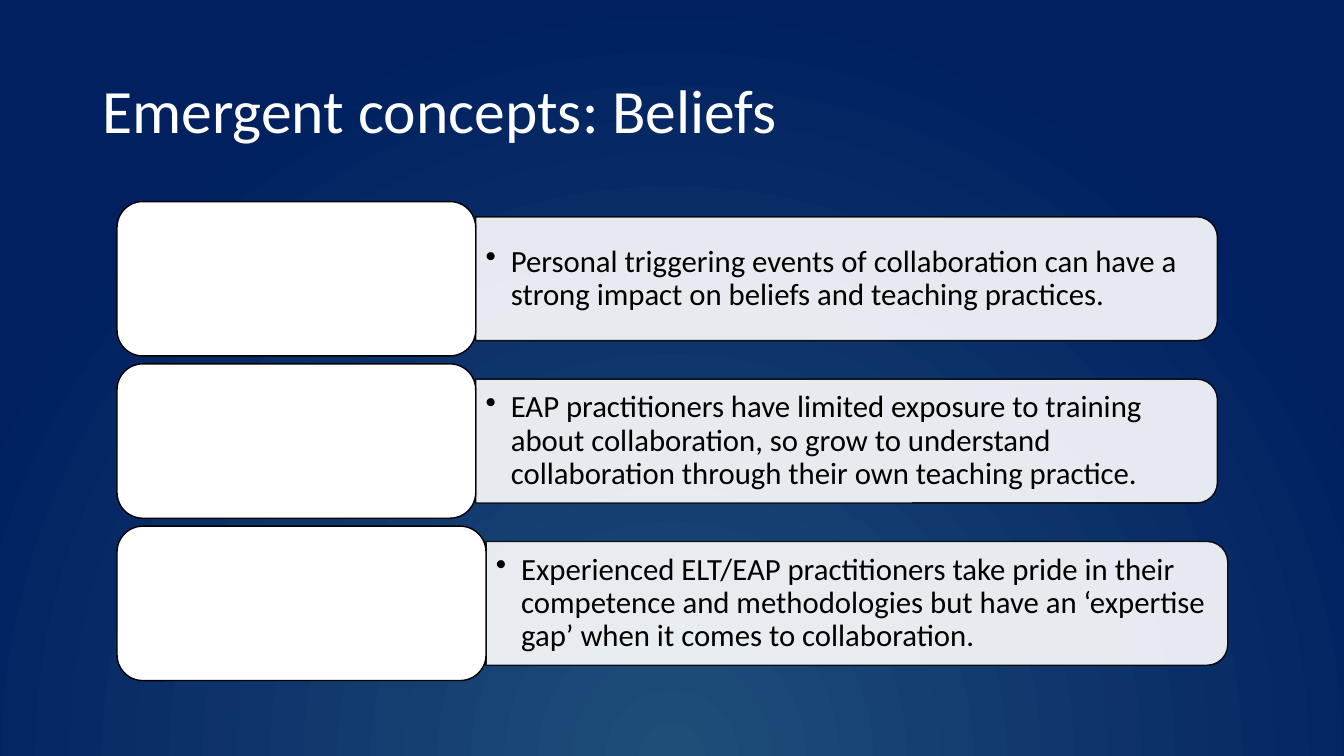
from lxml import etree
from pptx import Presentation
from pptx.dml.color import RGBColor
from pptx.enum.shapes import MSO_SHAPE
from pptx.enum.text import MSO_ANCHOR
from pptx.oxml import parse_xml
from pptx.oxml.ns import nsdecls, qn
from pptx.util import Cm, Pt

# Content: label width in cm, belief
TITLE = "Emergent concepts: Beliefs"
BELIEFS = [
    (9.04, "Personal triggering events of collaboration can have a strong impact "
           "on beliefs and teaching practices."),
    (9.04, "EAP practitioners have limited exposure to training about collaboration, "
           "so grow to understand collaboration through their own teaching practice."),
    (9.3, "Experienced ELT/EAP practitioners take pride in their competence and "
          "methodologies but have an ‘expertise gap’ when it comes to collaboration."),
]
COLORS = {"glow": "1F4E79", "navy": "002060", "white": "FFFFFF", "black": "000000"}
FONT = "Calibri"

# Layout in cm
LEFT, TOP, ROW_PITCH = 2.95, 5.08, 4.09
LABEL_HEIGHT = 3.89
PANEL_WIDTH, PANEL_HEIGHT = 18.69, 3.12
TEXT_WIDTH, TEXT_HEIGHT = 18.54, 2.82


def color(name):
    return RGBColor.from_string(COLORS[name])


def set_alpha(fill_parent, percent):
    for color_element in fill_parent.findall(qn("a:solidFill") + "/" + qn("a:srgbClr")):
        etree.SubElement(color_element, qn("a:alpha"), val=str(percent * 1000))


def add_box(slide, kind, left, top, width, height):
    shape = slide.shapes.add_shape(kind, Cm(left), Cm(top), Cm(width), Cm(height))
    shape.shadow.inherit = False
    shape.fill.solid()
    shape.fill.fore_color.rgb = color("white")
    shape.line.color.rgb = color("black")
    shape.line.width = Pt(1)
    return shape


def add_text(slide, text, left, top, width, height, size, color_name):
    box = slide.shapes.add_textbox(Cm(left), Cm(top), Cm(width), Cm(height))
    frame = box.text_frame
    frame.word_wrap = True
    frame.vertical_anchor = MSO_ANCHOR.MIDDLE
    paragraph = frame.paragraphs[0]
    paragraph.text = text
    paragraph.line_spacing = 0.9
    paragraph.font.name = FONT
    paragraph.font.size = Pt(size)
    paragraph.font.color.rgb = color(color_name)
    return paragraph


def add_bullet(paragraph):
    paragraph.space_after = Pt(3.3)
    properties = paragraph._p.get_or_add_pPr()
    properties.set("marL", str(Cm(0.635)))
    properties.set("indent", str(-Cm(0.635)))
    bullet = parse_xml(f'<a:buChar {nsdecls("a")} char="•"/>')
    properties.insert_element_before(bullet, "a:tabLst", "a:defRPr", "a:extLst")


def add_background(slide):
    fill = slide.background.fill
    fill.gradient()
    for stop, name in zip(fill.gradient_stops, ("glow", "navy")):
        stop.color.rgb = color(name)
    linear = next(slide._element.iter(qn("a:lin")))
    radial = parse_xml(
        f'<a:path {nsdecls("a")} path="circle">'
        '<a:fillToRect l="50000" t="130000" r="50000" b="-30000"/></a:path>')
    linear.getparent().replace(linear, radial)


def add_belief(slide, row, label_width, text):
    label_top = TOP + row * ROW_PITCH
    middle = label_top + LABEL_HEIGHT / 2
    panel_left = LEFT + label_width

    # Panel: an upright shape turned so that its round corners face right
    panel = add_box(slide, MSO_SHAPE.ROUND_2_SAME_RECTANGLE,
                    panel_left + (PANEL_WIDTH - PANEL_HEIGHT) / 2,
                    middle - PANEL_WIDTH / 2, PANEL_HEIGHT, PANEL_WIDTH)
    panel.rotation = 90
    set_alpha(panel._element.spPr, 90)
    set_alpha(panel.line._ln, 90)

    add_bullet(add_text(slide, text, panel_left, middle - TEXT_HEIGHT / 2,
                        TEXT_WIDTH, TEXT_HEIGHT, 22, "black"))

    # Empty label
    add_box(slide, MSO_SHAPE.ROUNDED_RECTANGLE, LEFT, label_top,
            label_width, LABEL_HEIGHT)


def main():
    presentation = Presentation()
    presentation.slide_width, presentation.slide_height = Cm(33.87), Cm(19.05)
    slide = presentation.slides.add_slide(presentation.slide_layouts[6])
    add_background(slide)
    add_text(slide, TITLE, 2.33, 1.01, 29.21, 3.68, 44, "white")
    for row, (label_width, text) in enumerate(BELIEFS):
        add_belief(slide, row, label_width, text)
    presentation.save("out.pptx")


if __name__ == "__main__":
    main()
